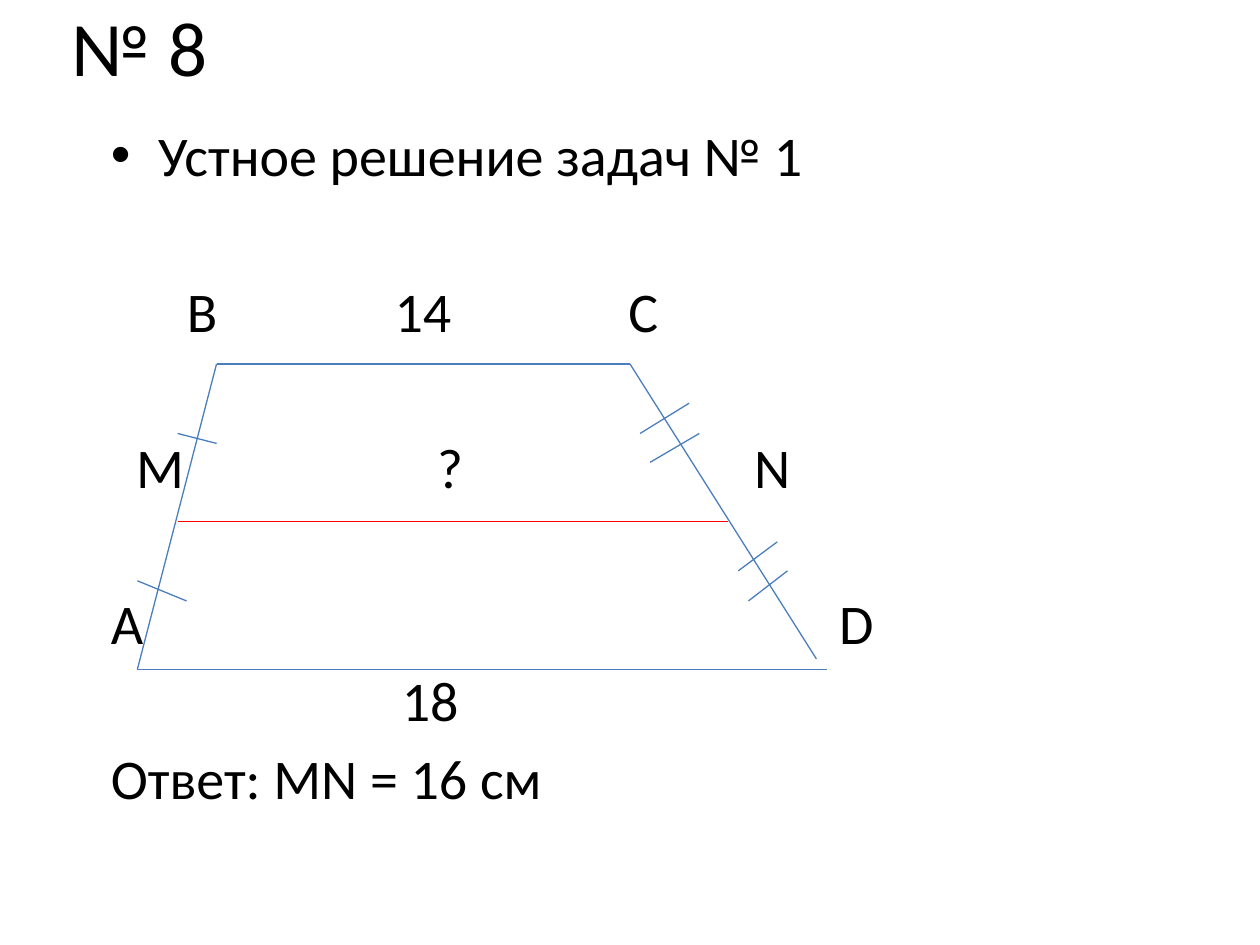
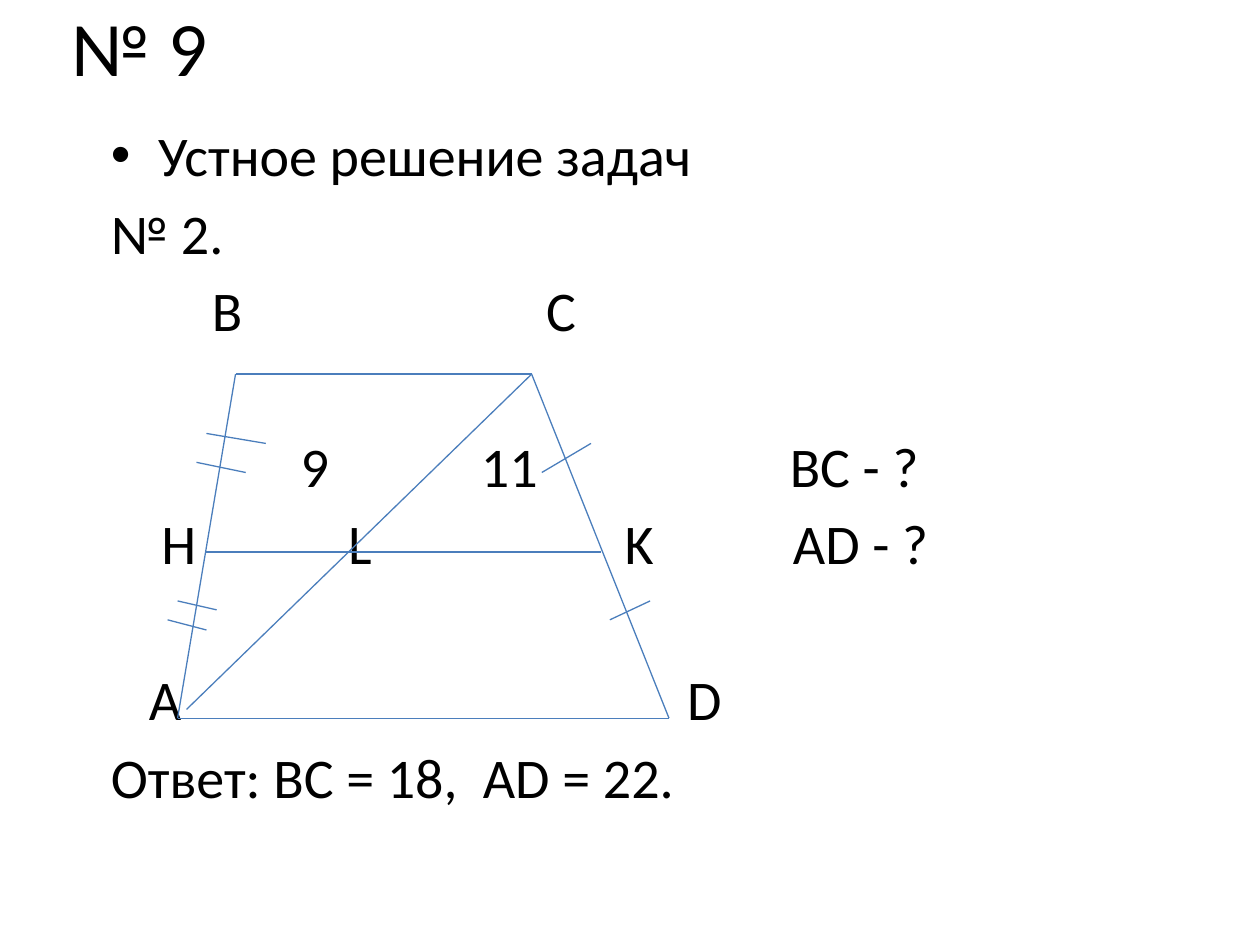
from typing import NamedTuple

from lxml.etree import SubElement
from pptx import Presentation
from pptx.dml.color import RGBColor
from pptx.enum.shapes import MSO_CONNECTOR
from pptx.enum.text import MSO_ANCHOR
from pptx.oxml.ns import qn
from pptx.util import Pt

BLACK = RGBColor(0x00, 0x00, 0x00)
BLUE = RGBColor(0x4B, 0x7E, 0xBC)
RED = RGBColor(0xFF, 0x00, 0x00)
FONT = "Calibri"
TITLE_BOX = (34, 0, 648, 52)
BODY_BOX = (56.25, 65.5, 607.5, 418)
INDENT = 27
GAP = 5.8  # space between neighbouring rows
PITCH = 44.86  # distance from one row to the next


class Row(NamedTuple):
    """One line of text in a numbered slot; tabs place its labels."""
    slot: int
    text: str
    tabs: tuple = ()
    bullet: bool = False


class Line(NamedTuple):
    start: tuple
    end: tuple
    color: RGBColor = BLUE


class Task(NamedTuple):
    title: str
    rows: list
    lines: list


def write(para, text: str, *, size: float, color: RGBColor = BLACK,
          before: float = 0, tabs: tuple = (), bullet: bool = False) -> None:
    props = para._p.get_or_add_pPr()
    if before:
        para.space_before = Pt(before)
    if bullet:
        props.set("marL", str(Pt(INDENT)))
        props.set("indent", str(-Pt(INDENT)))
        SubElement(props, qn("a:buFont"), typeface="Arial")
        SubElement(props, qn("a:buChar"), char="•")
    if tabs:
        stops = SubElement(props, qn("a:tabLst"))
        for stop in tabs:
            SubElement(stops, qn("a:tab"), pos=str(Pt(stop)), algn="l")
    run = para.add_run()
    run.text = text
    run.font.name = FONT
    run.font.size = Pt(size)
    run.font.color.rgb = color


def add_frame(slide, box: tuple, anchor: MSO_ANCHOR = MSO_ANCHOR.TOP):
    frame = slide.shapes.add_textbox(*map(Pt, box)).text_frame
    frame.word_wrap = True
    frame.vertical_anchor = anchor
    return frame


def add_rows(slide, rows: list) -> None:
    frame = add_frame(slide, BODY_BOX)
    last = None
    for row in rows:
        if last is None:
            para, before = frame.paragraphs[0], 0
        else:
            para = frame.add_paragraph()
            before = GAP + PITCH * (row.slot - last - 1)
        write(para, row.text, size=32, before=before,
              tabs=row.tabs, bullet=row.bullet)
        last = row.slot


def add_line(slide, line: Line) -> None:
    link = slide.shapes.add_connector(
        MSO_CONNECTOR.STRAIGHT, *map(Pt, line.start + line.end))
    link.line.color.rgb = line.color
    link.line.width = Pt(0.75)
    SubElement(link._element.spPr, qn("a:effectLst"))


def add_task(deck, task: Task) -> None:
    slide = deck.slides.add_slide(deck.slide_layouts[6])
    title = add_frame(slide, TITLE_BOX, MSO_ANCHOR.MIDDLE)
    write(title.paragraphs[0], task.title, size=44)
    add_rows(slide, task.rows)
    for line in task.lines:
        add_line(slide, line)


def midline_task() -> Task:
    a, b, c, d = (78.5, 382.5), (123.75, 208), (360, 208), (472.5, 382.5)
    m, n = (101.5, 298), (416, 298)
    rows = [
        Row(0, "Устное решение задач № 1", bullet=True),
        Row(2, "\tВ\t14\tС", (43.4, 162.1, 295.8)),
        Row(4, "\tM\t?\tN", (14.5, 186.5, 367.6)),
        Row(6, "А\tD", (416.2,)),
        Row(7, "\t18", (166.3,)),
        Row(8, "Ответ: MN = 16 см"),
    ]
    lines = [
        Line(b, c), Line(b, a), Line(c, (466.5, 376.5)), Line(a, d),
        Line(m, n, RED),
        Line((101.5, 247.7), (123.8, 253.4)),
        Line((78.5, 331.9), (106.6, 343.4)),
        Line((393.8, 230.4), (365.8, 247.7)),
        Line((399.6, 247.7), (371.5, 264.2)),
        Line((444.2, 309.6), (421.9, 326.2)),
        Line((450, 326.2), (427.7, 343.4)),
    ]
    return Task("№ 8", rows, lines)


def bases_task() -> Task:
    a, b, c, d = (101.5, 410.4), (134.6, 213.8), (303.8, 213.8), (382.3, 410.4)
    h, k = (118, 315.4), (343.4, 315.4)
    rows = [
        Row(0, "Устное решение задач", bullet=True),
        Row(1, "№ 2."),
        Row(2, "\tB\tC", (57.8, 248.8)),
        Row(4, "\t9\t11\tBC - ?", (108.5, 211.5, 388)),
        Row(5, "\tH\tL\tK\tAD - ?", (28.9, 135.6, 293.6, 389.8)),
        Row(7, "\tA\tD", (21.7, 329.4)),
        Row(8, "Ответ: BC = 18,  AD = 22."),
    ]
    lines = [
        Line(b, c), Line(b, a), Line(c, d), Line(a, d),
        Line(h, k), Line(c, (106.6, 405.4)),
        Line((118, 247.7), (151.9, 253.4)),
        Line((112.3, 264.2), (140.4, 270)),
        Line((101.5, 343.4), (123.8, 348.5)),
        Line((95.8, 354.2), (118, 360)),
        Line((337.7, 253.4), (309.6, 270)),
        Line((371.5, 343.4), (348.5, 354.2)),
    ]
    return Task("№ 9", rows, lines)


def main() -> None:
    deck = Presentation()
    deck.slide_width, deck.slide_height = Pt(720), Pt(540)
    for task in (midline_task(), bases_task()):
        add_task(deck, task)
    deck.save("out.pptx")


if __name__ == "__main__":
    main()
